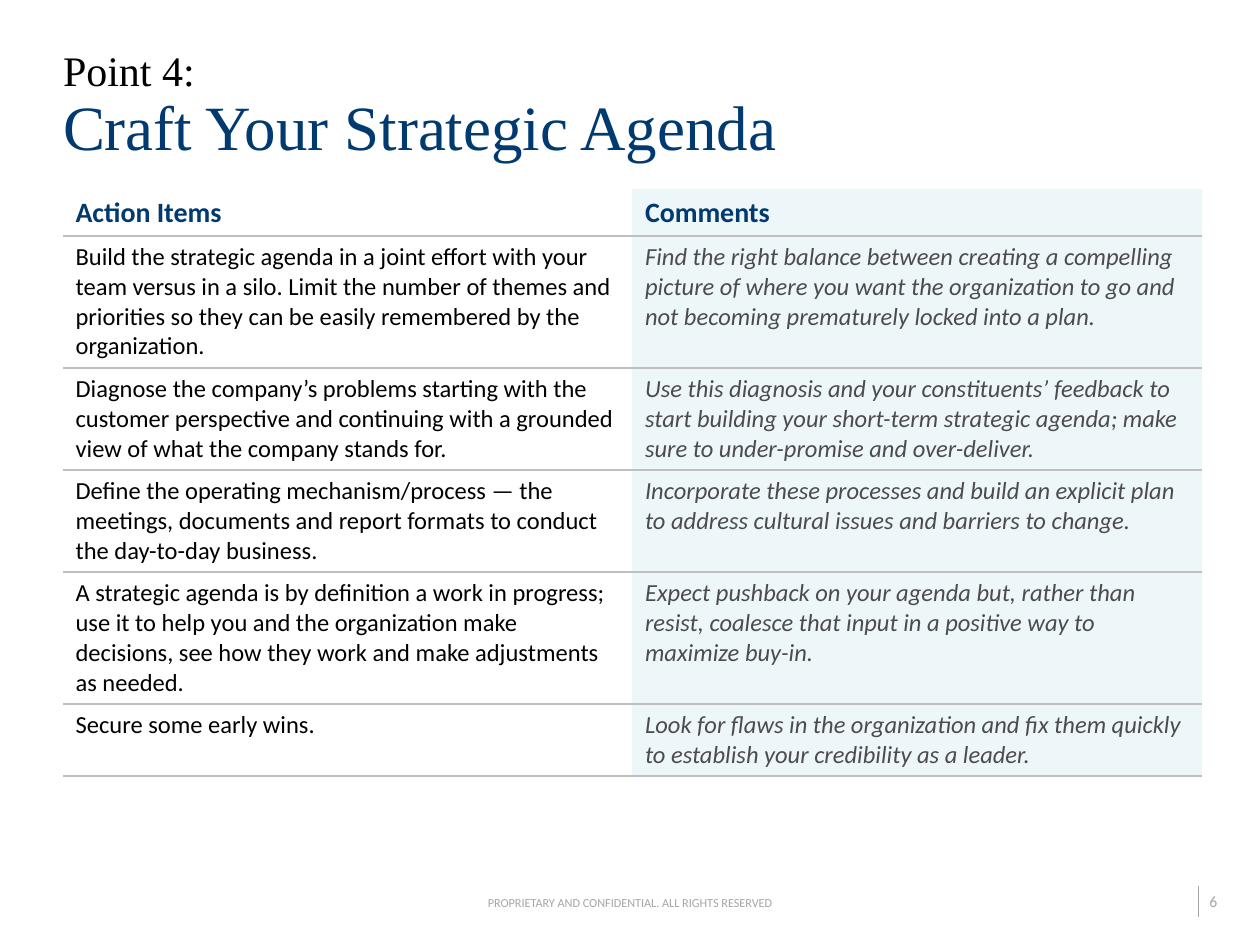
from copy import deepcopy

from pptx import Presentation
from pptx.dml.color import RGBColor
from pptx.enum.shapes import MSO_CONNECTOR
from pptx.enum.text import MSO_ANCHOR, MSO_AUTO_SIZE, PP_ALIGN
from pptx.oxml import parse_xml
from pptx.oxml.ns import nsdecls, qn
from pptx.util import Inches, Pt

NAVY = RGBColor(0x00, 0x3A, 0x70)
BLACK = RGBColor(0x00, 0x00, 0x00)
CHARCOAL = RGBColor(0x4C, 0x4C, 0x4E)
FOOTER_GRAY = RGBColor(0xA6, 0xA6, 0xA6)
DIVIDER_GRAY = RGBColor(0xA8, 0xA3, 0xAB)
RULE_GRAY = RGBColor(0xBF, 0xBF, 0xBF)
PALE_BLUE = RGBColor(0xED, 0xF6, 0xF8)

HEADINGS = ("Action Items", "Comments")
AGENDA = [
    ("Build the strategic agenda in a joint effort with your team versus in a silo. "
     "Limit the number of themes and priorities so they can be easily remembered by "
     "the organization.",
     "Find the right balance between creating a compelling picture of where you want "
     "the organization to go and not becoming prematurely locked into a plan."),
    ("Diagnose the company’s problems starting with the customer perspective and "
     "continuing with a grounded view of what the company stands for.",
     "Use this diagnosis and your constituents’ feedback to start building your "
     "short-term strategic agenda; make sure to under-promise and over-deliver."),
    ("Define the operating mechanism/process — the meetings, documents and report "
     "formats to conduct the day-to-day business.",
     "Incorporate these processes and build an explicit plan to address cultural "
     "issues and barriers to change."),
    ("A strategic agenda is by definition a work in progress; use it to help you and "
     "the organization make decisions, see how they work and make adjustments as needed.",
     "Expect pushback on your agenda but, rather than resist, coalesce that input in a "
     "positive way to maximize buy-in."),
    ("Secure some early wins.",
     "Look for flaws in the organization and fix them quickly to establish your "
     "credibility as a leader."),
]
ROW_HEIGHTS = (0.27, 0.65, 0.52, 0.52, 0.52, 0.38)


def format_span(span, size, color, name="Calibri", bold=False, italic=False):
    font = span.font
    font.name, font.size, font.bold, font.italic = name, Pt(size), bold, italic
    font.color.rgb = color


def set_insets(frame, left, top, right, bottom):
    frame.margin_left, frame.margin_top = Inches(left), Inches(top)
    frame.margin_right, frame.margin_bottom = Inches(right), Inches(bottom)


def place(shape, left, top, width, height):
    shape.left, shape.top = Inches(left), Inches(top)
    shape.width, shape.height = Inches(width), Inches(height)


def add_title(page, left, top, width, height):
    title = page.shapes.title
    place(title, left, top, width, height)
    frame = title.text_frame
    frame.auto_size = MSO_AUTO_SIZE.NONE
    frame.word_wrap = True
    frame.vertical_anchor = MSO_ANCHOR.BOTTOM
    set_insets(frame, 0, 0.05, 0, 0.05)
    para = frame.paragraphs[0]
    para.text = "Point 4:\vCraft Your Strategic Agenda"
    para.alignment = PP_ALIGN.LEFT
    para.line_spacing = 0.9
    point, headline = para.runs
    format_span(point, 24, BLACK, "Times New Roman")
    format_span(headline, 36, NAVY, "Times New Roman")
    # The line break takes the size of the first line.
    para._p.find(qn("a:br")).append(deepcopy(point._r.get_or_add_rPr()))


def set_borders(cell, has_top):
    """Rule the cell below, and above if asked, with no side lines."""
    rule = f'<a:solidFill><a:srgbClr val="{RULE_GRAY}"/></a:solidFill>'
    none = "<a:noFill/>"
    edges = {"lnL": none, "lnR": none, "lnT": rule if has_top else none, "lnB": rule}
    properties = cell._tc.get_or_add_tcPr()
    for index, (tag, paint) in enumerate(edges.items()):
        properties.insert(index, parse_xml(
            f'<a:{tag} {nsdecls("a")} w="{Pt(1)}">{paint}</a:{tag}>'))


def add_agenda_table(page, left, top, width, height):
    rows = [HEADINGS, *AGENDA]
    holder = page.shapes.add_table(len(rows), len(HEADINGS), Inches(left), Inches(top),
                                   Inches(width), Inches(height))
    table = holder.table
    table.first_row = table.horz_banding = False
    for row_index, texts in enumerate(rows):
        table.rows[row_index].height = Inches(ROW_HEIGHTS[row_index])
        is_header = row_index == 0
        for column_index, text in enumerate(texts):
            is_comment = column_index == 1
            cell = table.cell(row_index, column_index)
            cell.text_frame.text = text
            span = cell.text_frame.paragraphs[0].runs[0]
            if is_header:
                cell.vertical_anchor = MSO_ANCHOR.MIDDLE
                format_span(span, 16, NAVY, bold=True)
            else:
                format_span(span, 14, CHARCOAL if is_comment else BLACK, italic=is_comment)
            if is_comment:
                cell.fill.solid()
                cell.fill.fore_color.rgb = PALE_BLUE
            else:
                cell.fill.background()
            set_borders(cell, has_top=not is_header)
    holder.height = Inches(height)


def add_footer_text(page, bounds, text, size, insets, alignment, anchor):
    box = page.shapes.add_textbox(*map(Inches, bounds))
    frame = box.text_frame
    frame.word_wrap = False
    frame.vertical_anchor = anchor
    set_insets(frame, *insets)
    frame.text = text
    para = frame.paragraphs[0]
    para.alignment = alignment
    format_span(para.runs[0], size, FOOTER_GRAY)


def add_footer(page, left, top, width, height):
    notice_width, number_width = 2.28, 0.4
    right = left + width
    add_footer_text(page, (left + (width - notice_width) / 2, top + 0.07, notice_width, 0.12),
                    "PROPRIETARY AND CONFIDENTIAL. ALL RIGHTS RESERVED", 7,
                    (0, 0, 0, 0), PP_ALIGN.CENTER, MSO_ANCHOR.MIDDLE)
    add_footer_text(page, (right - number_width, top, number_width, height), "6", 9,
                    (0.1, 0.05, 0, 0.05), PP_ALIGN.LEFT, MSO_ANCHOR.TOP)
    divider_x = Inches(right - number_width + 0.01)
    divider = page.shapes.add_connector(MSO_CONNECTOR.STRAIGHT, divider_x, Inches(top),
                                        divider_x, Inches(top + height))
    divider.line.color.rgb = DIVIDER_GRAY
    divider.line.width = Pt(0.5)
    divider._element.spPr.append(parse_xml(f'<a:effectLst {nsdecls("a")}/>'))


def main():
    deck = Presentation()
    deck.slide_width, deck.slide_height = Inches(10), Inches(7.5)
    page = deck.slides.add_slide(deck.slide_layouts.get_by_name("Title Only"))
    add_title(page, 0.5, 0.25, 9, 1.1)
    add_agenda_table(page, 0.5, 1.5, 9.04, 4.37)
    add_footer(page, 0.1, 7.03, 9.8, 0.25)
    deck.save("out.pptx")


if __name__ == "__main__":
    main()
